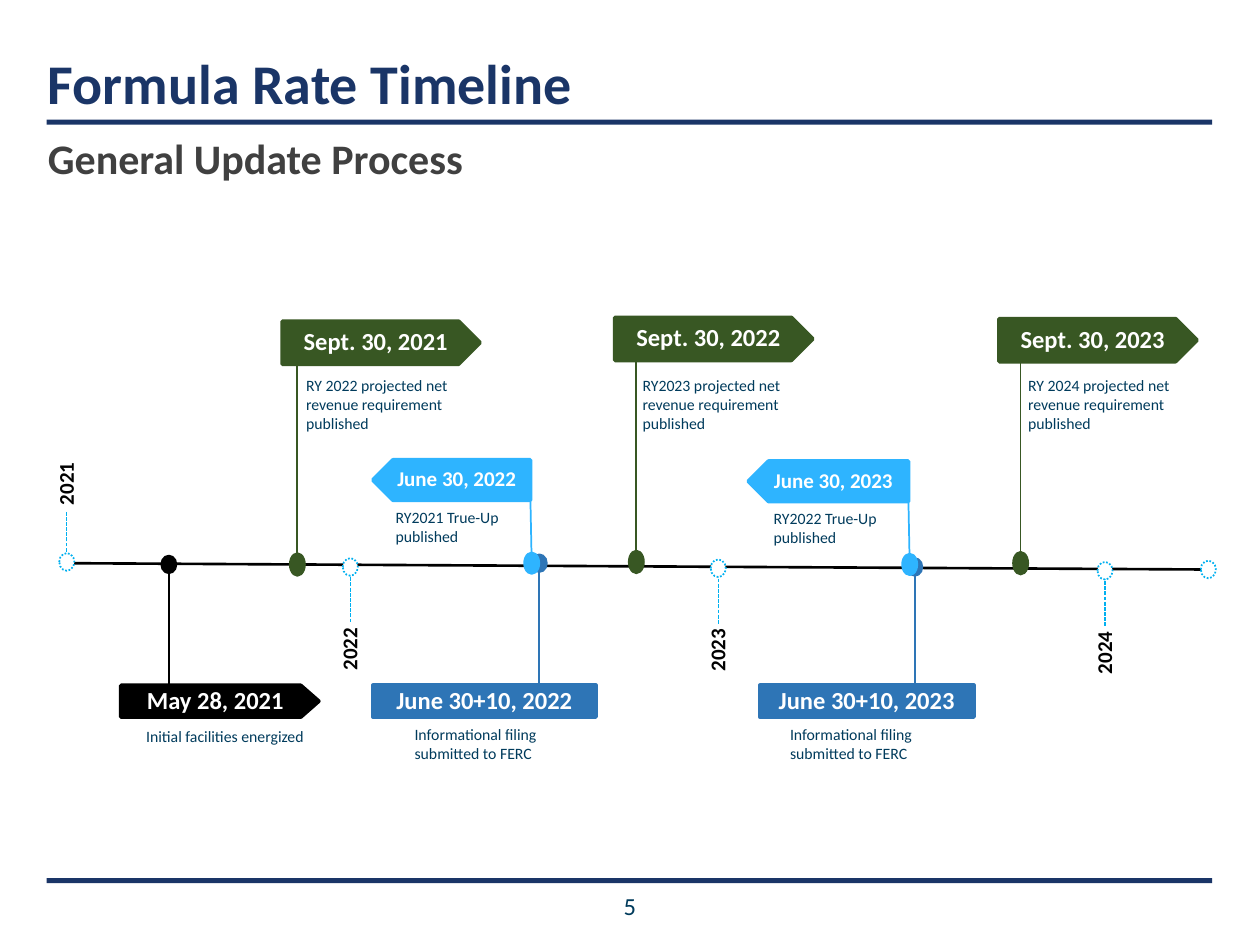
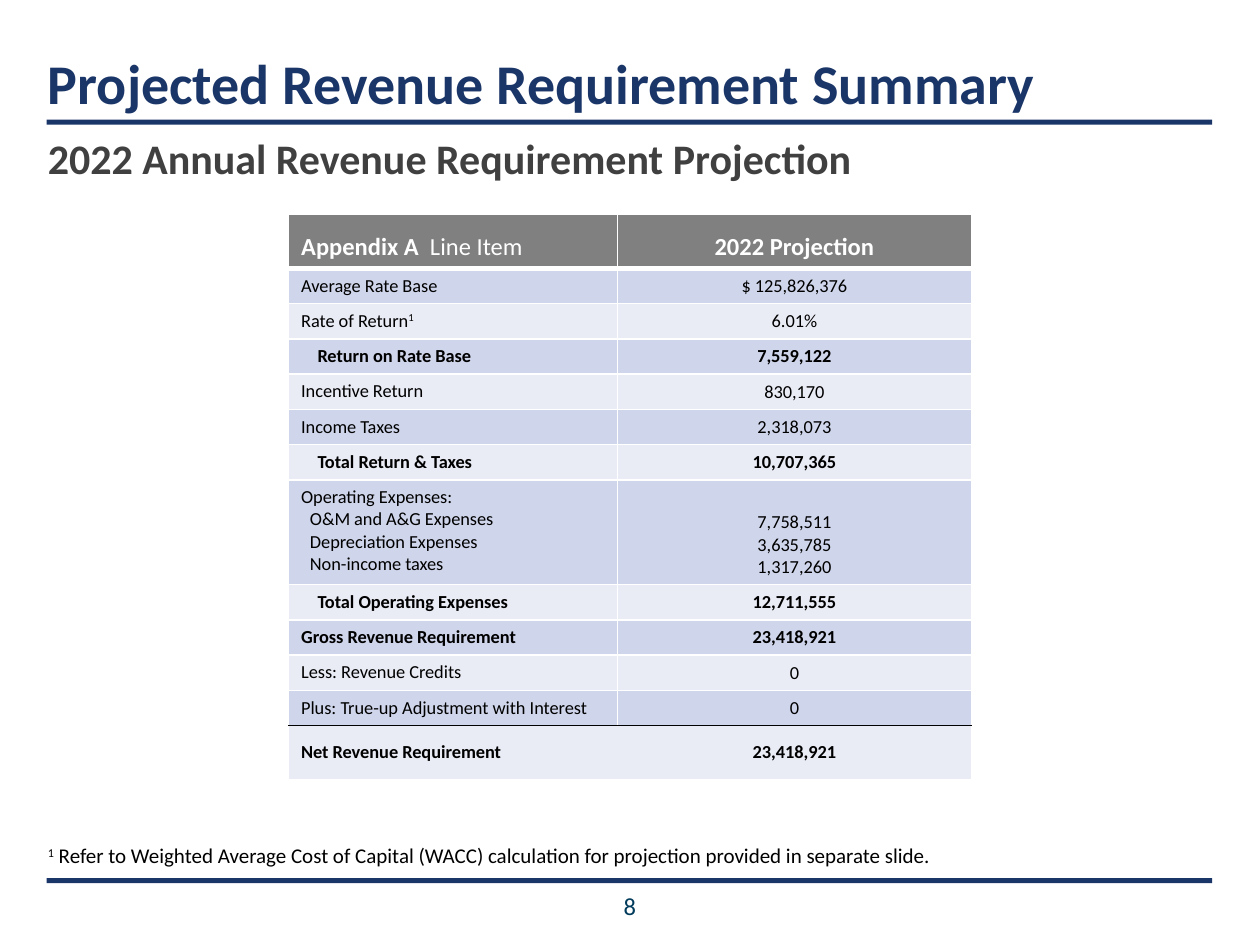
from dataclasses import dataclass

from lxml.etree import SubElement
from pptx import Presentation
from pptx.dml.color import RGBColor
from pptx.enum.dml import MSO_LINE as Dash
from pptx.enum.shapes import MSO_CONNECTOR as Conn, MSO_SHAPE as Form
from pptx.enum.text import MSO_ANCHOR as Anchor, PP_ALIGN as Align
from pptx.oxml.ns import qn
from pptx.util import Inches, Pt


@dataclass(frozen=True)
class Theme:
    font: str = "Calibri"
    navy: str = "1A3567"
    teal: str = "003B5C"
    dark: str = "404040"
    black: str = "000000"
    white: str = "FFFFFF"
    green: str = "385723"
    blue: str = "2E75B6"
    sky: str = "2EB4FF"
    cyan: str = "00B0F0"
    grey: str = "808080"
    bands: tuple = ("CFD5EA", "E9EBF5")
    title: float = 32
    sub: float = 24
    head: float = 14
    body: float = 12
    cell: float = 10.5
    note: float = 9


T = Theme()


@dataclass(frozen=True)
class Kind:
    """Look of one sort of timeline event."""
    color: str
    form: Form
    tall: float
    dot: float
    size: float = T.head
    point: float = 0.5
    flip: bool = False


RATE = Kind(T.green, Form.PENTAGON, 0.34, 0.18)
START = Kind(T.black, Form.PENTAGON, 0.25, 0.14, point=0.57)
FILING = Kind(T.blue, Form.RECTANGLE, 0.25, 0.14)
TRUEUP = Kind(T.sky, Form.PENTAGON, 0.32, 0.17, T.body, flip=True)

# kind, dot centre, flag (left, top, width), date, note (left, top, width), text
EVENTS = [
    (RATE, (2.36, 4.48), (2.24, 2.55, 1.57), "Sept. 30, 2021",
     (2.43, 2.98, 1.27), "RY 2022 projected net revenue requirement published"),
    (START, (1.34, 4.48), (0.96, 5.44, 1.57), "May 28, 2021",
     (1.16, 5.77, 1.45), "Initial facilities energized"),
    (FILING, (4.28, 4.47), (2.96, 5.44, 1.77), "June 30+10, 2022",
     (3.29, 5.75, 1.45), "Informational filing submitted to FERC"),
    (RATE, (5.05, 4.46), (4.88, 2.52, 1.57), "Sept. 30, 2022",
     (5.1, 2.98, 1.37), "RY2023 projected net revenue requirement published"),
    (RATE, (8.1, 4.47), (7.93, 2.53, 1.57), "Sept. 30, 2023",
     (8.16, 2.98, 1.37), "RY 2024 projected net revenue requirement published"),
    (TRUEUP, (4.22, 4.47), (2.96, 3.65, 1.25), "June 30, 2022",
     (3.14, 4.03, 1.1), "RY2021 True-Up published"),
    (FILING, (7.26, 4.5), (6.03, 5.44, 1.7), "June 30+10, 2023",
     (6.27, 5.75, 1.45), "Informational filing submitted to FERC"),
    (TRUEUP, (7.22, 4.48), (5.94, 3.66, 1.27), "June 30, 2023",
     (6.14, 4.04, 1.1), "RY2022 True-Up published"),
]

# label, dot centre, label above the axis
YEARS = [("2021", (0.53, 4.46), True), ("2022", (2.78, 4.5), False),
         ("2023", (5.7, 4.51), False), ("2024", (8.77, 4.53), False)]

# label lines, indent of the last lines, value lines, bold
ROWS = [
    (["Average Rate Base"], 0, ["$ 125,826,376"], False),
    (["Rate of Return^1"], 0, ["6.01%"], False),
    (["Return on Rate Base"], 0.13, ["7,559,122"], True),
    (["Incentive Return"], 0, ["830,170"], False),
    (["Income Taxes"], 0, ["2,318,073"], False),
    (["Total Return & Taxes"], 0.13, ["10,707,365"], True),
    (["Operating Expenses:", "O&M and A&G Expenses", "Depreciation Expenses",
      "Non-income taxes"], 0.07, ["7,758,511", "3,635,785", "1,317,260"], False),
    (["Total Operating Expenses"], 0.13, ["12,711,555"], True),
    (["Gross Revenue Requirement"], 0, ["23,418,921"], True),
    (["Less: Revenue Credits"], 0, ["0"], False),
    (["Plus: True-up Adjustment with Interest"], 0, ["0"], False),
    (["Net Revenue Requirement"], 0, ["23,418,921"], True),
]


def rgb(code):
    return RGBColor.from_string(code)


def add_run(para, text, size, color, bold=False):
    """Add text; every second part between ^ marks is superscript."""
    for num, part in enumerate(text.split("^")):
        if not part:
            continue
        run = para.add_run()
        run.text = part
        font = run.font
        font.name, font.size, font.bold = T.font, Pt(size), bold
        font.color.rgb = rgb(color)
        if num % 2:
            font._element.set("baseline", "30000")


def add_text(slide, box, text, size, color, bold=False, align=Align.LEFT,
             anchor=Anchor.TOP):
    frame = slide.shapes.add_textbox(*map(Inches, box)).text_frame
    frame.word_wrap = True
    frame.vertical_anchor = anchor
    frame.margin_left = frame.margin_right = 0
    frame.margin_top = frame.margin_bottom = 0
    para = frame.paragraphs[0]
    para.alignment = align
    add_run(para, text, size, color, bold)
    return frame


def add_form(slide, form, box, fill, line=None, width=1):
    shape = slide.shapes.add_shape(form, *map(Inches, box))
    shape.shadow.inherit = False
    shape.fill.solid()
    shape.fill.fore_color.rgb = rgb(fill)
    if line:
        shape.line.color.rgb = rgb(line)
        shape.line.width = Pt(width)
    else:
        shape.line.fill.background()
    return shape


def add_line(slide, start, end, color, width):
    line = slide.shapes.add_connector(Conn.STRAIGHT, *map(Inches, start + end))
    line.line.color.rgb = rgb(color)
    line.line.width = Pt(width)
    SubElement(line._element.spPr, qn("a:effectLst"))
    return line


def add_dot(slide, mid, tall, fill, line):
    x, y = mid
    box = (x - 0.06, y - tall / 2, 0.12, tall)
    return add_form(slide, Form.OVAL, box, fill, line)


def add_mark(slide, mid):
    dot = add_dot(slide, mid, 0.14, T.white, T.cyan)
    dot.line.dash_style = Dash.ROUND_DOT


def add_year(slide, label, mid, above):
    x, y = mid
    end, top = (y - 0.4, y - 0.9) if above else (y + 0.44, y + 0.37)
    tick = add_line(slide, mid, (x, end), T.cyan, 0.75)
    tick.line.dash_style = Dash.SQUARE_DOT
    add_mark(slide, mid)
    frame = add_text(slide, (x - 0.11, top, 0.2, 0.45), label, T.body, T.black, True)
    frame._element.bodyPr.set("vert", "vert270")


def add_event(slide, kind, mid, flag, date, note, text):
    """Join a dot on the axis by a stem to a dated flag with a note."""
    x, y = mid
    left, top, wide = flag
    near = top if top > y else top + kind.tall
    add_line(slide, mid, (min(x, left + wide), near), kind.color, 1)
    plate = add_form(slide, kind.form, (left, top, wide, kind.tall),
                     kind.color, kind.color, 2.25)
    if kind.form == Form.PENTAGON:
        plate.adjustments[0] = kind.point
    if kind.flip:
        plate._element.spPr.xfrm.set("flipH", "1")
    plate.text_frame.vertical_anchor = Anchor.MIDDLE
    para = plate.text_frame.paragraphs[0]
    para.alignment, para.line_spacing = Align.CENTER, 0.9
    add_run(para, date, kind.size, T.white, True)
    add_text(slide, note + (0.41,), text, T.note, T.teal)
    add_dot(slide, mid, kind.dot, kind.color, kind.color)


def set_edges(cell, **edges):
    """Draw cell edges L, R, T, B, each a (colour, points) pair or None."""
    props = cell._tc.get_or_add_tcPr()
    for side, edge in edges.items():
        line = SubElement(props, qn(f"a:ln{side}"))
        if edge:
            line.set("w", str(Pt(edge[1])))
            paint = SubElement(line, qn("a:solidFill"))
            SubElement(paint, qn("a:srgbClr")).set("val", edge[0])
        else:
            SubElement(line, qn("a:noFill"))


def fill_cell(cell, lines, size, color, bold, align, anchor, indent=0):
    cell.vertical_anchor = anchor
    frame = cell.text_frame
    for num, text in enumerate(lines):
        para = frame.add_paragraph() if num else frame.paragraphs[0]
        para.alignment = align
        if indent and (num or len(lines) == 1):
            para._p.get_or_add_pPr().set("marL", str(Inches(indent)))
        add_run(para, text, size, color, bold)


def add_grid(slide, left, top):
    """Build the revenue table with its corner at left, top."""
    last = len(ROWS)
    tall = [0.43] + [0.83 if len(row[0]) > 1 else 0.28 for row in ROWS]
    tall[-1] = 0.42
    wide = (2.61, 2.81)
    box = (left, top, sum(wide), sum(tall))
    grid = slide.shapes.add_table(last + 1, 2, *map(Inches, box)).table
    for col, width in zip(grid.columns, wide):
        col.width = Inches(width)
    thin, rule = (T.white, 1), (T.black, 1)
    for num, row in enumerate(grid.rows):
        row.height = Inches(tall[num])
        above = {0: thin, 1: (T.white, 3), last: rule}.get(num, thin)
        below = {0: (T.white, 3), last - 1: rule, last: None}.get(num, thin)
        side = None if num == last else thin
        for cell in row.cells:
            set_edges(cell, L=side, R=side, T=above, B=below)
            cell.fill.solid()
            cell.fill.fore_color.rgb = rgb(T.bands[(num - 1) % 2] if num else T.grey)

    name, value = grid.rows[0].cells
    fill_cell(name, ["Appendix A "], T.head, T.white, True, Align.LEFT, Anchor.BOTTOM)
    add_run(name.text_frame.paragraphs[0], " Line Item", T.head, T.white)
    fill_cell(value, ["2022 Projection"], T.head, T.white, True, Align.CENTER,
              Anchor.BOTTOM)
    for num, (labels, indent, sums, bold) in enumerate(ROWS, 1):
        name, value = grid.rows[num].cells
        fill_cell(name, labels, T.cell, T.black, bold, Align.LEFT,
                  Anchor.MIDDLE if num == last else Anchor.TOP, indent)
        fill_cell(value, sums, T.cell, T.black, bold, Align.CENTER,
                  Anchor.BOTTOM if len(sums) > 1 else Anchor.MIDDLE)


def add_page(deck, title, sub, page):
    """Add a slide with the shared title, rules and page number."""
    slide = deck.slides.add_slide(deck.slide_layouts[6])
    for top in (0.95, 6.97):
        add_form(slide, Form.RECTANGLE, (0.37, top, 9.25, 0.04), T.navy)
    add_text(slide, (0, 7.07, 10, 0.25), page, T.head, T.teal, align=Align.CENTER)
    add_text(slide, (0.38, 0.22, 9.25, 0.7), title, T.title, T.navy, True,
             anchor=Anchor.BOTTOM)
    add_text(slide, (0.38, 1.05, 9.25, 0.5), sub, T.sub, T.dark, True, Align.JUSTIFY)
    return slide


def add_timeline(deck):
    slide = add_page(deck, "Formula Rate Timeline", "General Update Process", "5")
    add_line(slide, (0.53, 4.47), (9.54, 4.52), T.black, 1.5)
    for year in YEARS:
        add_year(slide, *year)
    add_mark(slide, (9.59, 4.52))
    for event in EVENTS:
        add_event(slide, *event)


def add_summary(deck):
    slide = add_page(deck, "Projected Revenue Requirement Summary",
                     "2022 Annual Revenue Requirement Projection", "8")
    add_grid(slide, 2.29, 1.7)
    add_text(slide, (0.38, 6.69, 8.98, 0.2),
             "^1^ Refer to Weighted Average Cost of Capital (WACC) calculation "
             "for projection provided in separate slide.", T.body, T.black)


def main():
    deck = Presentation()
    deck.slide_width, deck.slide_height = Inches(10), Inches(7.5)
    add_timeline(deck)
    add_summary(deck)
    deck.save("out.pptx")


if __name__ == "__main__":
    main()
